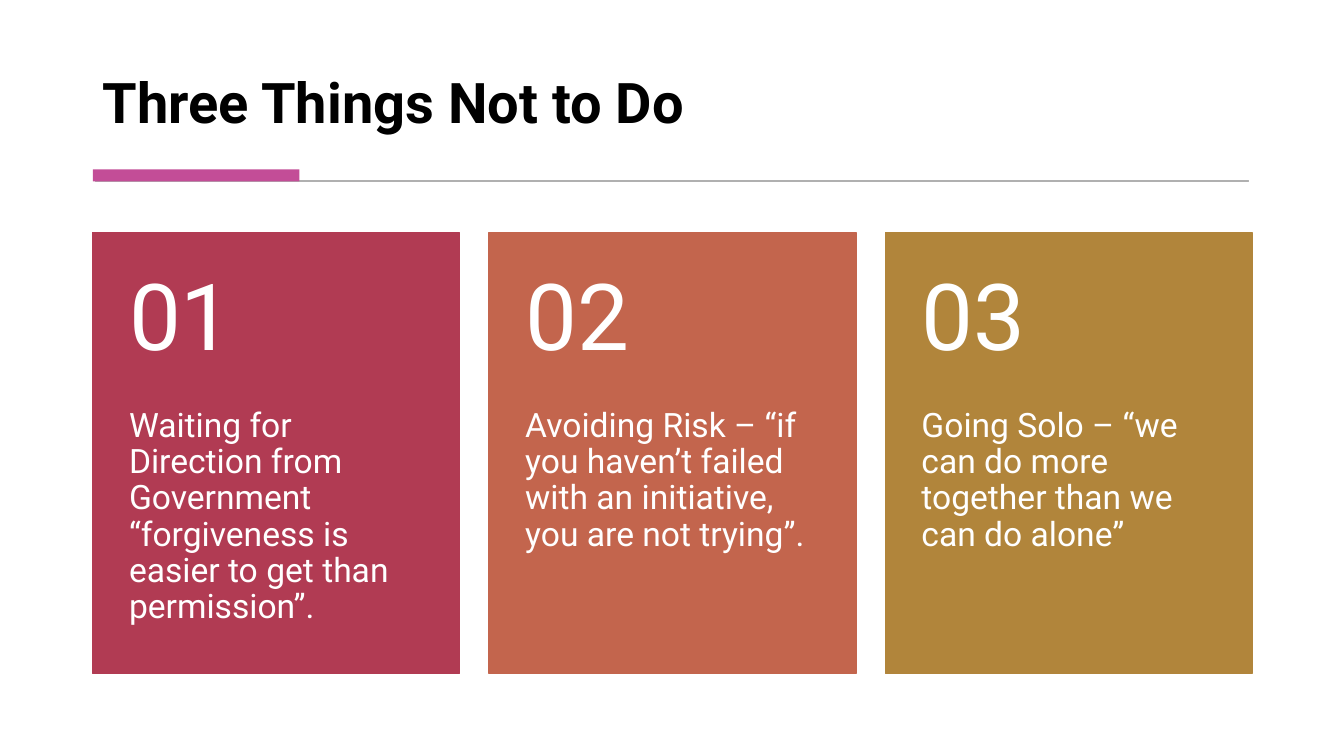
from pptx import Presentation
from pptx.dml.color import RGBColor
from pptx.enum.shapes import MSO_SHAPE
from pptx.enum.text import MSO_ANCHOR, PP_ALIGN
from pptx.util import Inches, Pt

deck = Presentation()
deck.slide_width = Inches(13.33)
deck.slide_height = Inches(7.5)
slide = deck.slides.add_slide(deck.slide_layouts[6])


def add_box(left, top, width, height, color, line=0):
    """Add a filled rectangle, outlined in its own colour if line is set."""
    box = slide.shapes.add_shape(MSO_SHAPE.RECTANGLE, Inches(left), Inches(top),
                                 Inches(width), Inches(height))
    box.shadow.inherit = False
    box.fill.solid()
    box.fill.fore_color.rgb = RGBColor.from_string(color)
    if line:
        box.line.color.rgb = RGBColor.from_string(color)
        box.line.width = Pt(line)
    else:
        box.line.fill.background()


def add_text(text, left, top, width, height, size, color, anchor, pads, bold=False):
    """Add a one-run text box; pads are left, top, right, bottom in inches."""
    box = slide.shapes.add_textbox(Inches(left), Inches(top), Inches(width), Inches(height))
    frame = box.text_frame
    frame.word_wrap = True
    frame.vertical_anchor = anchor
    frame.margin_left, frame.margin_top, frame.margin_right, frame.margin_bottom = map(Inches, pads)
    para = frame.paragraphs[0]
    para.alignment = PP_ALIGN.LEFT
    para.line_spacing = 0.9
    run = para.add_run()
    run.text = text
    run.font.name = "Roboto"
    run.font.size = Pt(size)
    run.font.bold = bold
    run.font.color.rgb = RGBColor.from_string(color)


# Title and rule
add_text("Three Things Not to Do", 0.92, 0.28, 11.49, 1.11, 40, "000000",
         MSO_ANCHOR.BOTTOM, (0.1, 0.05, 0.1, 0.05), True)
add_box(0.95, 1.79, 11.43, 0.01, "B0B0B0", 0.75)
add_box(0.92, 1.68, 2.05, 0.12, "C34D97")

# Numbered cards
cards = [
    ("B13B53", "Waiting for Direction from Government “forgiveness is easier to get than permission”."),
    ("C3654D", "Avoiding Risk – “if you haven’t failed with an initiative, you are not trying”."),
    ("B1853B", "Going Solo – “we can do more together than we can do alone”"),
]
wide = 3.64
for i, (color, text) in enumerate(cards):
    left = 0.92 + i * 3.93
    add_box(left, 2.31, wide, 4.37, color, 1)
    add_text(text, left, 4.05, wide, 2.62, 24, "FFFFFF", MSO_ANCHOR.TOP, (0.36, 0, 0.36, 0.36))
    add_text(f"{i + 1:02}", left, 2.31, wide, 1.75, 66, "FFFFFF", MSO_ANCHOR.MIDDLE,
             (0.36, 0.18, 0.36, 0.18))

deck.save("out.pptx")
